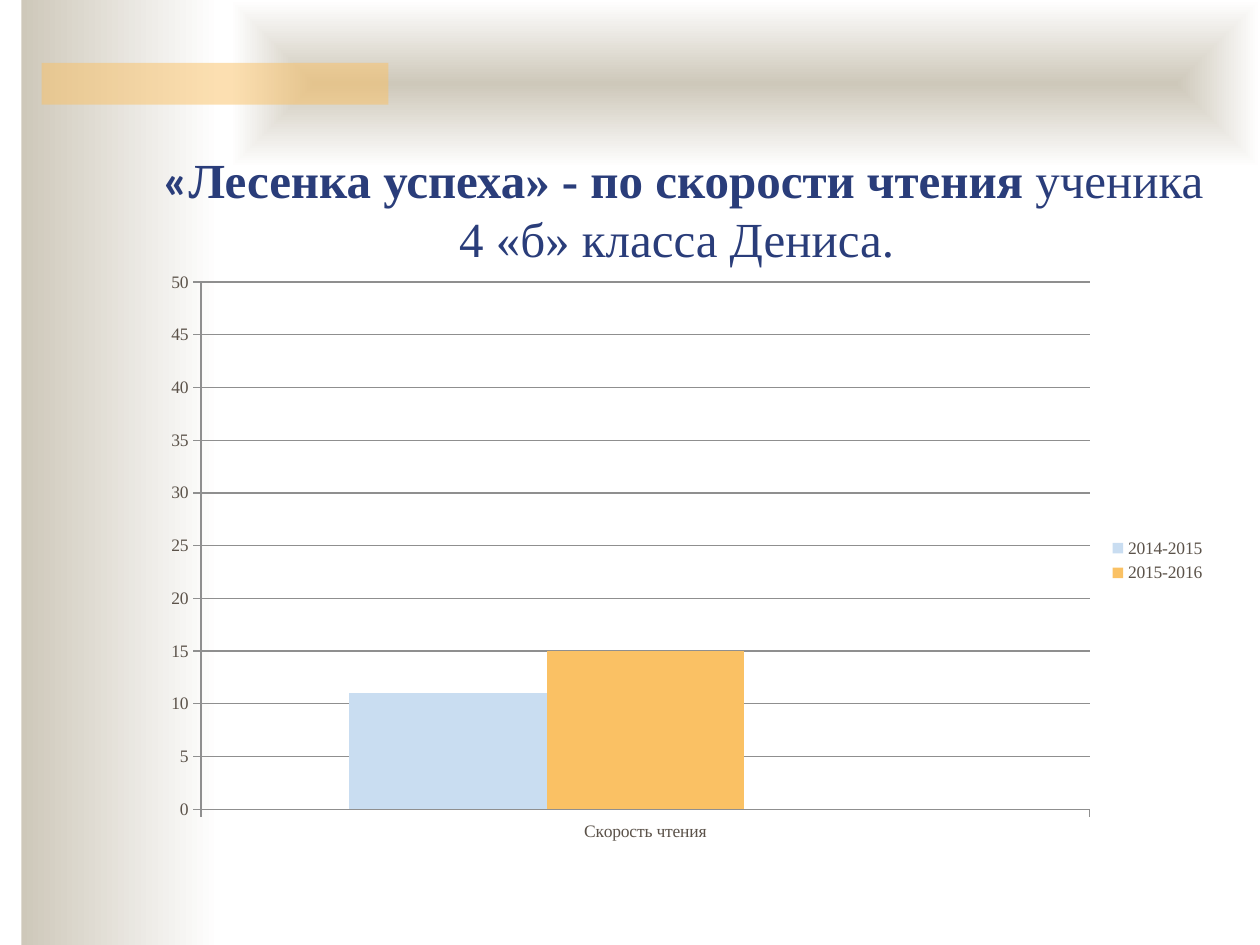
import pptx
import pptx.chart.data
import pptx.dml.color
import pptx.enum.chart
import pptx.enum.shapes
import pptx.enum.text
import pptx.oxml
import pptx.oxml.ns
import pptx.util
from pptx.util import Cm

COLORS = {
    "sand": "CEC8BA", "white": "FFFFFF", "amber": "FAC164",
    "sky": "C9DDF1", "navy": "2A3D7A", "label": "5B5249", "grid": "8F8F8F",
}
FONT = "Times New Roman"
NS = pptx.oxml.ns.nsdecls("a", "c")


def rgb(name):
    return pptx.dml.color.RGBColor.from_string(COLORS[name])


def xml(text):
    """Parse an element whose opening tag is marked with NS."""
    return pptx.oxml.parse_xml(text.replace("NS", NS, 1))


def add_panel(page, left, top, width, height):
    panel = page.shapes.add_shape(
        pptx.enum.shapes.MSO_SHAPE.RECTANGLE, left, top, width, height)
    panel.shadow.inherit = False
    panel.line.fill.background()
    return panel


def fade(panel, from_center=False):
    """Fade sand to white, rightwards or from the centre outwards."""
    panel.fill.gradient()
    panel.fill.gradient_angle = 0
    for stop, name in zip(panel.fill.gradient_stops, ("sand", "white")):
        stop.color.rgb = rgb(name)
    if from_center:
        linear = panel._element.spPr.find(".//" + pptx.oxml.ns.qn("a:lin"))
        linear.getparent().replace(linear, xml(
            '<a:path NS path="shape"><a:fillToRect l="50000" t="50000" '
            'r="50000" b="50000"/></a:path>'))


def add_backdrop(page, width, height):
    fade(add_panel(page, Cm(0.43), 0, Cm(4.01), height))
    band_left = Cm(4.65)
    fade(add_panel(page, band_left, 0, width - band_left, Cm(3.38)), True)
    bar = add_panel(page, Cm(0.84), Cm(1.27), Cm(6.99), Cm(0.84))
    bar.fill.solid()
    bar.fill.fore_color.rgb = rgb("amber")
    bar._element.spPr.find(".//" + pptx.oxml.ns.qn("a:srgbClr")).append(
        xml('<a:alpha NS val="50000"/>'))


def add_text(para, text, font=FONT, size=28, color="navy", bold=False):
    span = para.add_run()
    span.text = text
    span.font.name = font
    span.font.size = pptx.util.Pt(size)
    span.font.color.rgb = rgb(color)
    span.font.bold = bold


def add_title(page, left, top, width, height):
    box = page.shapes.add_textbox(left, top, width, height)
    frame = box.text_frame
    frame.word_wrap = True
    frame.vertical_anchor = pptx.enum.text.MSO_ANCHOR.BOTTOM
    para = frame.paragraphs[0]
    para.alignment = pptx.enum.text.PP_ALIGN.CENTER
    add_text(para, "«", font="Calibri", bold=True)
    add_text(para, "Лесенка успеха» - по скорости чтения ", bold=True)
    add_text(para, "ученика 4 «б» класса Дениса. ")


def style_line(line):
    line.color.rgb = rgb("grid")
    line.width = pptx.util.Pt(0.75)


def add_reading_chart(page, left, top, width, height):
    data = pptx.chart.data.CategoryChartData()
    data.categories = ["Скорость чтения"]
    for name, value in (("2014-2015", 11), ("2015-2016", 15), ("Series 3", None)):
        data.add_series(name, [value])
    chart = page.shapes.add_chart(
        pptx.enum.chart.XL_CHART_TYPE.COLUMN_CLUSTERED,
        left, top, width, height, data).chart
    chart.has_title = False
    chart.font.name = FONT
    chart.font.size = pptx.util.Pt(10)
    chart.font.color.rgb = rgb("label")

    plot = chart.plots[0]
    plot.gap_width = 150
    plot.overlap = 0
    plot.vary_by_categories = False
    for series, name in zip(plot.series, ("sky", "amber", "white")):
        series.format.fill.solid()
        series.format.fill.fore_color.rgb = rgb(name)

    for axis in (chart.category_axis, chart.value_axis):
        axis.major_tick_mark = pptx.enum.chart.XL_TICK_MARK.OUTSIDE
        axis.minor_tick_mark = pptx.enum.chart.XL_TICK_MARK.NONE
        style_line(axis.format.line)
    scale = chart.value_axis
    scale.minimum_scale, scale.maximum_scale, scale.major_unit = 0, 50, 5
    scale.has_major_gridlines = True
    style_line(scale.major_gridlines.format.line)

    chart.has_legend = True
    legend = chart.legend
    legend.position = pptx.enum.chart.XL_LEGEND_POSITION.RIGHT
    legend.include_in_layout = False
    # The third series keeps its slot in the cluster but has no legend entry.
    legend._element.find(pptx.oxml.ns.qn("c:legendPos")).addnext(xml(
        '<c:legendEntry NS><c:idx val="2"/><c:delete val="1"/></c:legendEntry>'))

    area = chart._chartSpace.chart.plotArea
    for layout in area.findall(pptx.oxml.ns.qn("c:layout")):
        area.remove(layout)
    places = "".join(
        f'<c:{side} val="{share}"/>'
        for side, share in (("x", 0.05), ("y", 0.03), ("w", 0.83), ("h", 0.89)))
    area.insert(0, xml(
        '<c:layout NS><c:manualLayout><c:layoutTarget val="inner"/>'
        '<c:xMode val="edge"/><c:yMode val="edge"/>'
        f'{places}</c:manualLayout></c:layout>'))


def main():
    deck = pptx.Presentation()
    deck.slide_width, deck.slide_height = Cm(25.4), Cm(19.05)
    page = deck.slides.add_slide(deck.slide_layouts[6])
    add_backdrop(page, deck.slide_width, deck.slide_height)
    left, width = Cm(2.97), Cm(21.59)
    add_title(page, left, Cm(1.73), width, Cm(3.78))
    add_reading_chart(page, left, Cm(5.33), width, Cm(11.94))
    deck.save("out.pptx")


if __name__ == "__main__":
    main()
